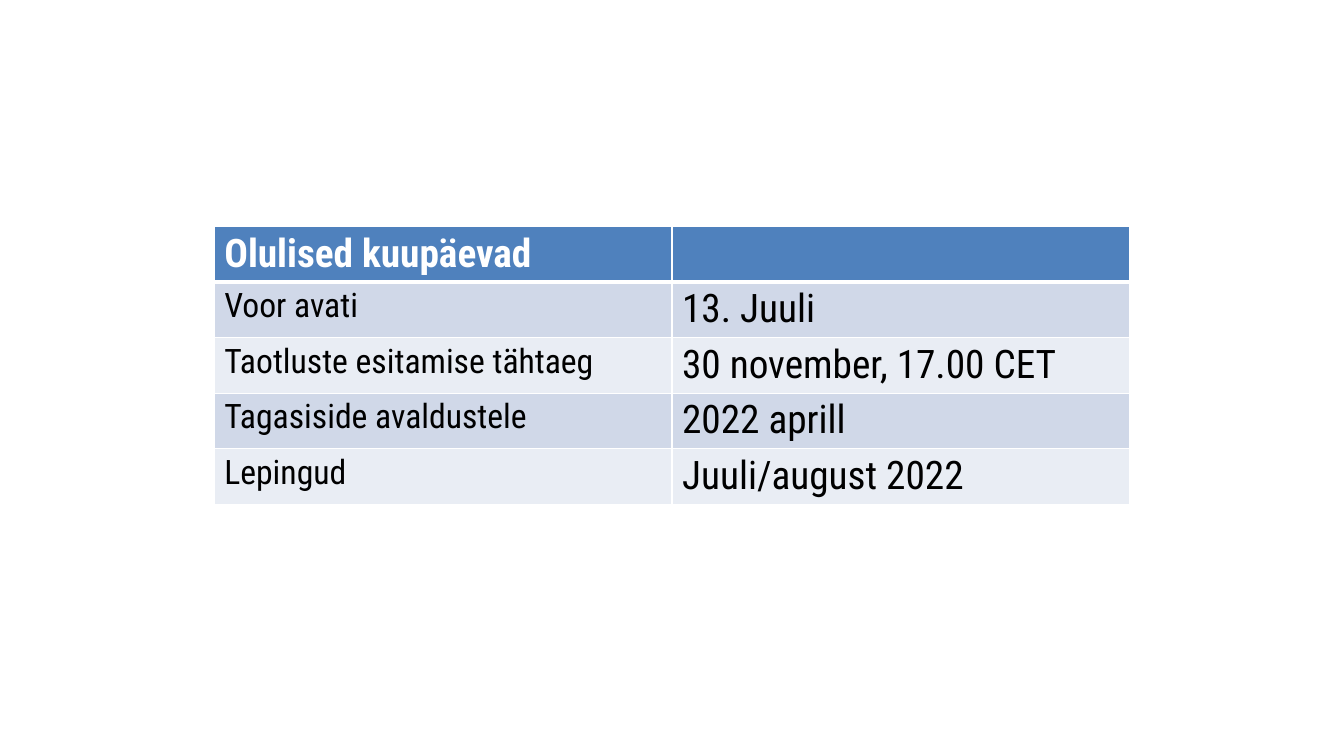
from dataclasses import dataclass

from lxml.etree import SubElement
from pptx import Presentation
from pptx.dml.color import RGBColor as Color
from pptx.oxml.ns import qn
from pptx.util import Inches, Pt


@dataclass(frozen=True)
class Theme:
    font: str = "Roboto Condensed"
    heading: str = "4F81BD"
    bands: tuple = ("D0D8E8", "E9EDF4")
    border: str = "FFFFFF"
    heading_text: str = "FFFFFF"
    body_text: str = "000000"
    large: int = 28
    small: int = 24
    thin: int = 1
    thick: int = 3
    line_spacing: float = 0.97


THEME = Theme()
COLUMN_WIDTH = 4.53
ROW_HEIGHT = 0.55
DATES = [
    ("Olulised kuupäevad", ""),
    ("Voor avati", "13. Juuli"),
    ("Taotluste esitamise tähtaeg", "30 november, 17.00 CET"),
    ("Tagasiside avaldustele", "2022 aprill"),
    ("Lepingud", "Juuli/august 2022"),
]


def set_borders(cell, widths):
    properties = cell._tc.get_or_add_tcPr()
    for side in ("L", "R", "T", "B"):
        width = Pt(widths.get(side, THEME.thin))
        line = SubElement(properties, qn(f"a:ln{side}"), w=str(width))
        fill = SubElement(line, qn("a:solidFill"))
        SubElement(fill, qn("a:srgbClr"), val=THEME.border)


def set_text(cell, text, size, color, bold):
    para = cell.text_frame.paragraphs[0]
    para.line_spacing = THEME.line_spacing
    if not text:
        return
    span = para.add_run()
    span.text = text
    formats = {"name": THEME.font, "size": Pt(size), "bold": bold}
    for name, value in formats.items():
        setattr(span.font, name, value)
    span.font.color.rgb = Color.from_string(color)


def style_cell(cell, text, row, column):
    heading = row == 0
    widths = {0: {"B": THEME.thick}, 1: {"T": THEME.thick}}.get(row, {})
    set_borders(cell, widths)
    fill = THEME.heading if heading else THEME.bands[(row - 1) % 2]
    cell.fill.solid()
    cell.fill.fore_color.rgb = Color.from_string(fill)
    size = THEME.large if heading or column == 1 else THEME.small
    color = THEME.heading_text if heading else THEME.body_text
    set_text(cell, text, size, color, heading)


def add_dates_table(page, left, top):
    columns = len(DATES[0])
    frame = page.shapes.add_table(
        len(DATES), columns, Inches(left), Inches(top),
        Inches(COLUMN_WIDTH * columns), Inches(ROW_HEIGHT * len(DATES)),
    )
    for row, texts in enumerate(DATES):
        for column, text in enumerate(texts):
            style_cell(frame.table.cell(row, column), text, row, column)


def main():
    deck = Presentation()
    deck.slide_width = Inches(13.3)
    deck.slide_height = Inches(7.48)
    page = deck.slides.add_slide(deck.slide_layouts[6])
    add_dates_table(page, 2.12, 2.24)
    deck.save("out.pptx")


if __name__ == "__main__":
    main()
